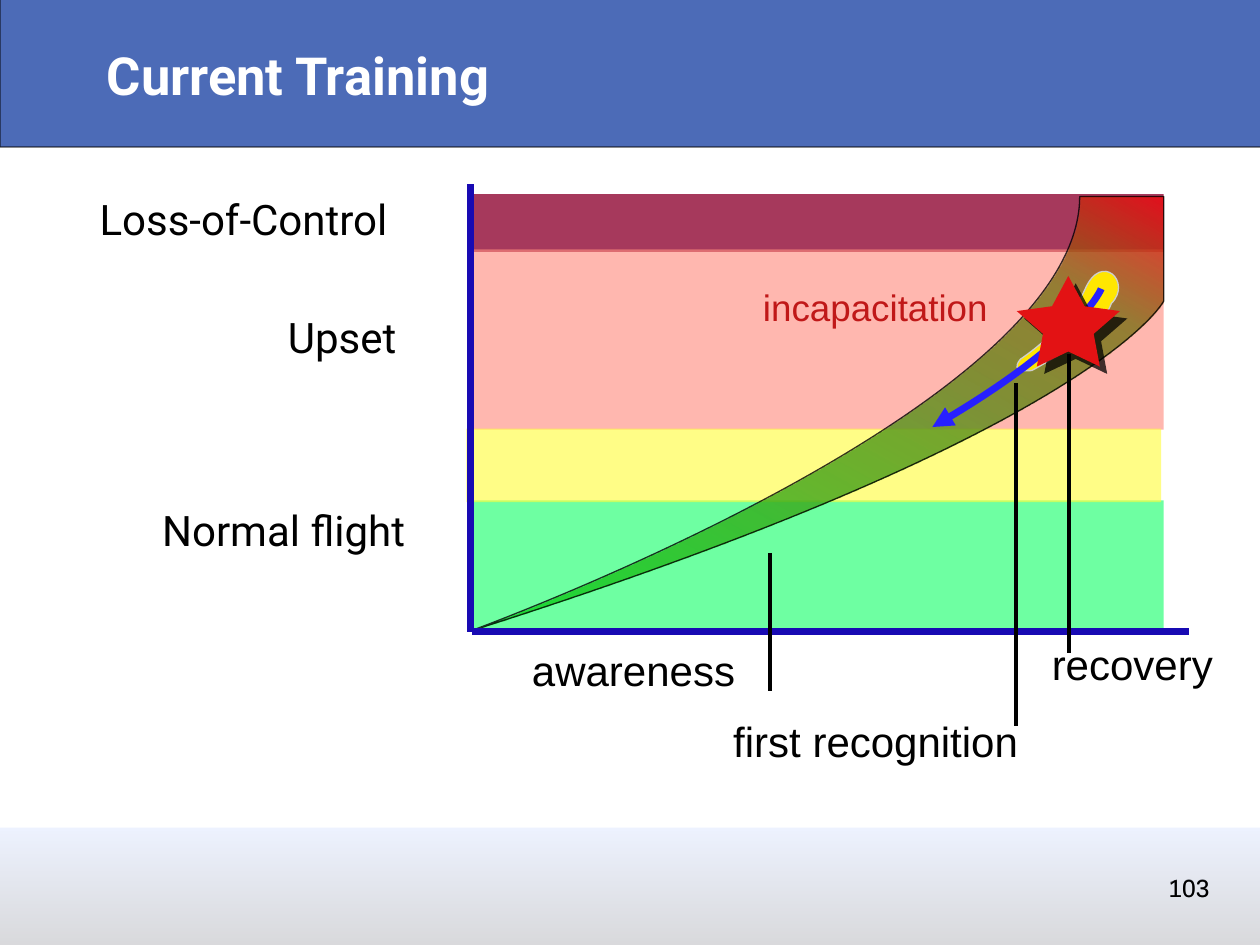
from lxml import etree
from pptx import Presentation
from pptx.dml.color import RGBColor
from pptx.enum import shapes, text
from pptx.oxml import parse_xml
from pptx.oxml.ns import nsdecls, qn
from pptx.util import Pt

COLORS = {
    "banner": "002D99", "white": "FFFFFF", "black": "000000",
    "control_loss": "8E022F", "upset": "FF8C7E", "caution": "FFFD3C",
    "normal": "15FF69", "axis": "180AB3", "capsule": "FFE601",
    "capsule_edge": "CECECE", "arrow": "2720FF", "star": "E31214",
    "warning": "C01818", "footer_top": "DCE6FF", "footer_bottom": "B4B5BA",
    "wedge_start": "00D71A", "wedge_middle": "796E13", "wedge_end": "F3050D",
}


def color(name):
    """Return the named colour."""
    return RGBColor.from_string(COLORS[name])


def set_fill(fill, name, alpha=100):
    """Fill with one colour at an opacity in percent."""
    fill.solid()
    fill.fore_color.rgb = color(name)
    if alpha < 100:
        element = fill._xPr.find(".//" + qn("a:srgbClr"))
        etree.SubElement(element, qn("a:alpha")).set("val", str(alpha * 1000))


def set_gradient(shape, stops, angle, alpha):
    """Fill a shape with a linear gradient."""
    shape.fill.background()
    stop_xml = "".join(
        f'<a:gs pos="{position * 1000}"><a:srgbClr val="{COLORS[name]}">'
        f'<a:alpha val="{alpha * 1000}"/></a:srgbClr></a:gs>'
        for position, name in stops)
    gradient = parse_xml(
        f'<a:gradFill {nsdecls("a")} rotWithShape="1"><a:gsLst>{stop_xml}</a:gsLst>'
        f'<a:lin ang="{angle * 60000}" scaled="0"/></a:gradFill>')
    properties = shape._element.spPr
    properties.replace(properties.find(qn("a:noFill")), gradient)


def set_line(line, name, width, alpha=100):
    """Style an outline."""
    line.width = Pt(width)
    set_fill(line.fill, name, alpha)


def add_band(slide, left, top, width, height):
    """Add a rectangle without outline or shadow."""
    shape = slide.shapes.add_shape(shapes.MSO_SHAPE.RECTANGLE,
                                   *map(Pt, (left, top, width, height)))
    shape.shadow.inherit = False
    shape.line.fill.background()
    return shape


def add_label(slide, box, words, size, font="Arial", name="black", wrap=False,
              align=text.PP_ALIGN.LEFT, bold=False, anchor=text.MSO_ANCHOR.TOP):
    """Add a one-line text box."""
    shape = slide.shapes.add_textbox(*map(Pt, box))
    frame = shape.text_frame
    frame.text = words
    frame.word_wrap = wrap
    frame.vertical_anchor = anchor
    frame.margin_left = frame.margin_right = Pt(3)
    frame.margin_top = frame.margin_bottom = 0
    paragraph = frame.paragraphs[0]
    paragraph.alignment = align
    run_font = paragraph.runs[0].font
    run_font.name, run_font.size, run_font.bold = font, Pt(size), bold
    run_font.color.rgb = color(name)


def add_line(slide, start, end, name, width):
    """Add a straight line."""
    connector = slide.shapes.add_connector(
        shapes.MSO_CONNECTOR.STRAIGHT, *map(Pt, start + end))
    set_line(connector.line, name, width)
    etree.SubElement(connector._element.spPr, qn("a:effectLst"))


def add_outline(slide, origin, box, start, segments, close=True):
    """Add a freeform whose segments hold one point or three curve points."""
    left, top, width, height = box
    x, y = origin[0] + left, origin[1] + top
    builder = slide.shapes.build_freeform(Pt(x), Pt(y))
    builder.add_line_segments([(Pt(x + width), Pt(y + height))], close=False)
    shape = builder.convert_to_shape()
    shape.shadow.inherit = False
    path = shape._element.spPr.find(".//" + qn("a:path"))
    for child in list(path):
        path.remove(child)
    commands = [("a:moveTo", [start])]
    commands += [("a:lnTo" if len(points) == 1 else "a:cubicBezTo", points)
                 for points in segments]
    for tag, points in commands:
        command = etree.SubElement(path, qn(tag))
        for point_x, point_y in points:
            point = etree.SubElement(command, qn("a:pt"))
            point.set("x", str(Pt(point_x - left)))
            point.set("y", str(Pt(point_y - top)))
    if close:
        etree.SubElement(path, qn("a:close"))
    return shape


def add_banner(slide, left, top, width, height):
    """Draw the title band."""
    band = add_band(slide, left, top, width, height)
    set_fill(band.fill, "banner", 70)
    set_line(band.line, "black", 0.75, 70)
    add_label(slide, (left + 58, top + 15, 605, 61), "Current Training", 30, "Roboto",
              "white", True, bold=True, anchor=text.MSO_ANCHOR.MIDDLE)


def add_footer(slide, left, top, width, height):
    """Draw the footer band between the two layers of the page number."""
    for font in ("Roboto", "Arial"):
        add_label(slide, (left + 660, top + 26, 39, 17), "103", 14, font,
                  align=text.PP_ALIGN.CENTER)
        if font == "Roboto":
            band = add_band(slide, left, top, width, height)
            set_gradient(band, [(0, "footer_top"), (100, "footer_bottom")], 90, 50)


def add_levels(slide, left, top):
    """Name the flight states beside the vertical axis."""
    for words, right, offset, width in (("Loss-of-Control", 197.4, 3.4, 197),
                                        ("Upset", 202.5, 71, 102),
                                        ("Normal flight", 207.5, 181, 158)):
        add_label(slide, (left + right - width, top + offset, width, 40), words, 24,
                  "Roboto", wrap=True, align=text.PP_ALIGN.RIGHT)


def add_bands(slide, left, top, width):
    """Draw the coloured severity bands."""
    for name, shift, offset, height, alpha in (
            ("normal", 0, 181, 75, 62), ("control_loss", 0, 6, 33, 78),
            ("upset", 0, 37.5, 103, 62), ("caution", -1.5, 140, 42, 62)):
        band = add_band(slide, left + shift, top + offset, width, height)
        set_fill(band.fill, name, alpha)


def add_wedge(slide, left, top):
    """Draw the widening risk wedge."""
    tip, peak, corner, shoulder = (0.5, 255.7), (349, 7.3), (397, 7.3), (397, 67)
    wedge = add_outline(slide, (left, top), (0.5, 7.3, 396.5, 248.4), tip,
                        [(tip, (349, 129), peak), (corner,), (shoulder,),
                         (shoulder, (359, 142), tip)])
    set_gradient(wedge, [(0, "wedge_start"), (82, "wedge_middle"), (100, "wedge_end")],
                 299, 78)
    set_line(wedge.line, "black", 0.75, 78)


def add_recovery_path(slide, left, top):
    """Draw the yellow capsule and the blue arrow over it."""
    start, bend, tip, base = (315.2, 100.2), (351.9, 60.6), (367, 68.5), (321.7, 106.7)
    capsule = add_outline(slide, (left, top), (313, 49.8, 58.3, 56.9), start,
                          [(start, (341.8, 82.9), bend),
                           ((361.3, 38.3), (379.3, 56.3), tip),
                           (tip, (363.4, 84.4), base),
                           (base, (308, 108.8), start)])
    set_fill(capsule.fill, "capsule")
    set_line(capsule.line, "capsule_edge", 0.75)
    start = (361.3, 60)
    arrow = add_outline(slide, (left, top), (264.8, 60, 96.5, 79), start,
                        [(start, (349.8, 90), (264.8, 139))], close=False)
    arrow.fill.background()
    set_line(arrow.line, "arrow", 4)
    etree.SubElement(arrow.line._get_or_add_ln(), qn("a:tailEnd")).set("type", "triangle")


def add_star(slide, left, top, width, height):
    """Draw the red star with its shadow."""
    middle = width / 2
    half = [(9.3, 17.3), (middle, 20.1), (14.5, 33.1), (18, height)]
    points = [(middle + x, y) for x, y in half] + [(middle, 43.2)]
    points += [(middle - x, y) for x, y in reversed(half)]
    star = add_outline(slide, (left, top), (0, 0, width, height), (middle, 0),
                       [(point,) for point in points])
    set_fill(star.fill, "star")
    star.line.fill.background()
    effects = star._element.spPr.find(qn("a:effectLst"))
    effects.append(parse_xml(
        f'<a:outerShdw {nsdecls("a")} dist="{Pt(6)}" dir="2700000" algn="tl" '
        f'rotWithShape="0"><a:srgbClr val="{COLORS["black"]}">'
        '<a:alpha val="75000"/></a:srgbClr></a:outerShdw>'))


def add_diagram(slide, left, top, width, height):
    """Draw the chart of flight states against training stages."""
    add_bands(slide, left, top, width - 15)
    add_wedge(slide, left, top)
    add_line(slide, (left + 1, top + height), (left + 1, top), "axis", 4)
    add_line(slide, (left + 1.7, top + height), (left + width - 0.3, top + height),
             "axis", 4)
    for x, start, end in ((312.6, 114, 309.7), (172, 211, 290)):
        add_line(slide, (left + x, top + start), (left + x, top + end), "black", 2)
    add_recovery_path(slide, left, top)
    add_line(slide, (left + 343, top + 97.3), (left + 343, top + 268), "black", 2)
    add_star(slide, left + 313, top + 52.7, 59, 51.8)
    for words, x, y, label_width, size, name in (
            ("first recognition", 148, 304, 175, 24, "black"),
            ("recovery", 330, 260, 104, 24, "black"),
            ("awareness", 33, 263.4, 128, 24, "black"),
            ("incapacitation", 165, 58, 140, 21, "warning")):
        add_label(slide, (left + x, top + y, label_width, size * 1.45), words, size,
                  name=name)


def main():
    """Build and save the slide."""
    presentation = Presentation()
    presentation.slide_width, presentation.slide_height = Pt(720), Pt(540)
    slide = presentation.slides.add_slide(presentation.slide_layouts[6])
    add_footer(slide, 0, 473, 720, 67)
    add_banner(slide, 0, -3, 720.5, 87)
    add_levels(slide, 27, 107)
    add_diagram(slide, 268, 105, 412, 256)
    presentation.save("out.pptx")


if __name__ == "__main__":
    main()
